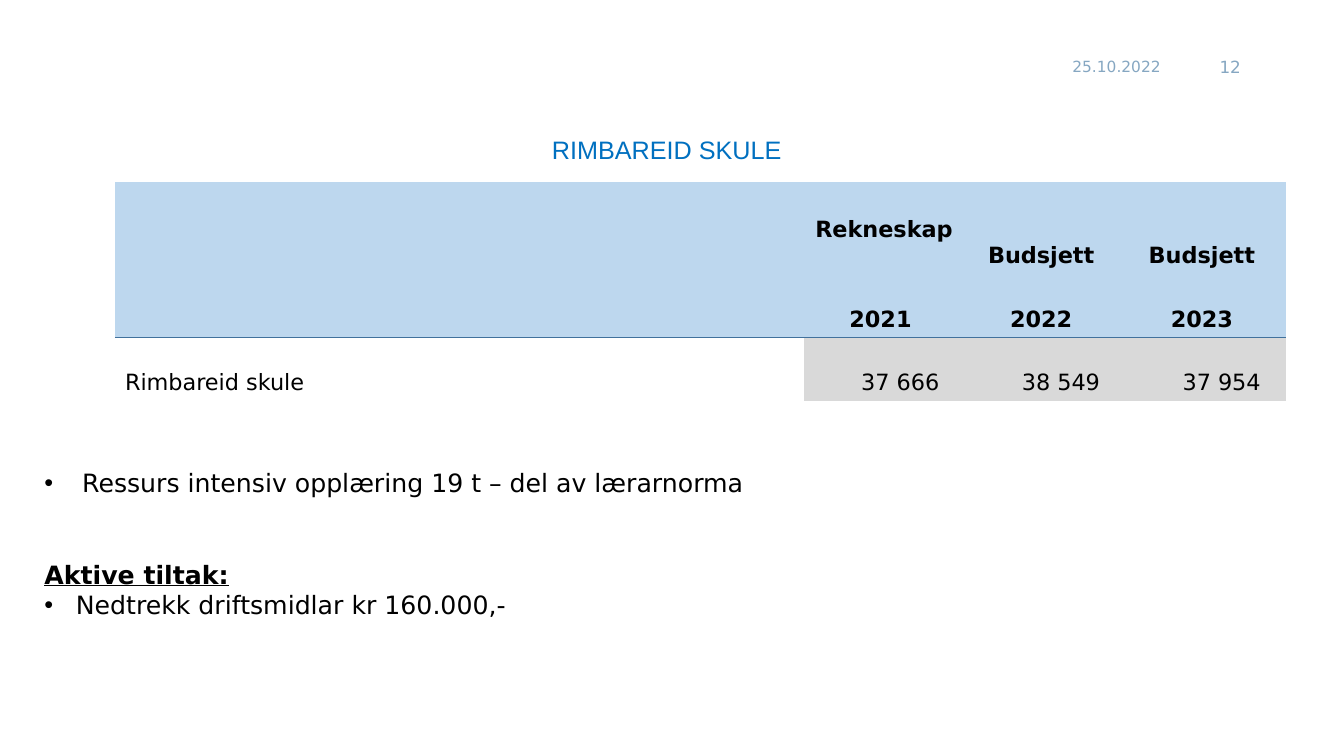
"""Build the budget slide for Rimbareid skule."""
from lxml import etree
from pptx import Presentation
from pptx.dml.color import RGBColor
from pptx.enum.text import MSO_ANCHOR, MSO_AUTO_SIZE, PP_ALIGN
from pptx.oxml import parse_xml
from pptx.oxml.ns import nsdecls, qn
from pptx.util import Pt

LEFT, MID, RIGHT = PP_ALIGN.LEFT, PP_ALIGN.CENTER, PP_ALIGN.RIGHT
TOP, CENTER, BOTTOM = MSO_ANCHOR.TOP, MSO_ANCHOR.MIDDLE, MSO_ANCHOR.BOTTOM
FIXED = MSO_AUTO_SIZE.NONE
BLACK = RGBColor(0x00, 0x00, 0x00)
BLUE = RGBColor(0x00, 0x70, 0xC0)
MUTED = RGBColor(0x86, 0xA7, 0xC2)
PALE = RGBColor(0xBD, 0xD7, 0xEE)
GRAY = RGBColor(0xD9, 0xD9, 0xD9)
RULE = RGBColor(0x41, 0x71, 0x9C)
NO_GRID = "{2D5ABB26-0587-4C30-8999-92F81FD0307C}"


def write(para, text, size=18, font="DejaVu Sans", color=BLACK, bold=False,
          line=False, align=LEFT, before=0):
    para.alignment = align
    para.space_before = Pt(before)
    run = para.add_run()
    run.text = text
    run.font.size = Pt(size)
    run.font.name = font
    run.font.color.rgb = color
    run.font.bold = bold
    run.font.underline = line


def place(shape, left, top, width, height, anchor):
    shape.left, shape.top = Pt(left), Pt(top)
    shape.width, shape.height = Pt(width), Pt(height)
    frame = shape.text_frame
    frame.word_wrap = True
    frame.auto_size = FIXED
    frame.vertical_anchor = anchor
    return frame


deck = Presentation()
deck.slide_width, deck.slide_height = Pt(960), Pt(540)
slide = deck.slides.add_slide(deck.slide_layouts[1])
shapes = slide.shapes

for text, left, width, size, align in [
    ("25.10.2022", 758.9, 82.8, 11, LEFT),
    ("12", 852.5, 41, 12, RIGHT),
]:
    box = shapes.add_textbox(0, 0, 0, 0)
    frame = place(box, left, 33.1, width, 28.8, CENTER)
    write(frame.paragraphs[0], text, size=size, color=MUTED, align=align)

frame = place(shapes.title, 24.5, 92.2, 903.6, 30, TOP)
write(frame.paragraphs[0], "RIMBAREID SKULE", font="Arial", color=BLUE,
      align=MID)

frame = place(slide.placeholders[1], 24.5, 330.4, 903.6, 140, TOP)
items = [
    ("Ressurs intensiv opplæring 19 t – del av lærarnorma", 27, {}),
    ("Aktive tiltak:", 0, {"bold": True, "line": True, "before": 44}),
    ("Nedtrekk driftsmidlar kr 160.000,-", 22.5, {}),
]
for i, (text, indent, style) in enumerate(items):
    para = frame.add_paragraph() if i else frame.paragraphs[0]
    props = para._p.get_or_add_pPr()
    props.set("marL", str(Pt(indent)))
    props.set("indent", str(-Pt(indent)))
    if indent:
        etree.SubElement(props, qn("a:buChar")).set("char", "•")
    else:
        etree.SubElement(props, qn("a:buNone"))
    write(para, text, **style)

rows = [
    ["", "Rekneskap", "Budsjett", "Budsjett"],
    ["", "2021", "2022", "2023"],
    ["Rimbareid skule", "37 666", "38 549", "37 954"],
]
widths = [492, 114.8, 114.8, 114.8]
heights = [65.3, 45.4, 45.4]
table = shapes.add_table(3, 4, Pt(82.1), Pt(130.3), Pt(sum(widths)),
                         Pt(sum(heights))).table
table.first_row = table.horz_banding = False
table._tbl.tblPr[0].text = NO_GRID
for col, width in zip(table.columns, widths):
    col.width = Pt(width)
for row, height in zip(table.rows, heights):
    row.height = Pt(height)

for r, row in enumerate(rows):
    for c, text in enumerate(row):
        cell = table.cell(r, c)
        cell.vertical_anchor = BOTTOM
        head = r < 2
        if head or c:
            cell.fill.solid()
            cell.fill.fore_color.rgb = PALE if head else GRAY
        else:
            cell.fill.background()
        if r:
            edge = "lnB" if r == 1 else "lnT"
            cell._tc.get_or_add_tcPr().insert(0, parse_xml(
                f'<a:{edge} {nsdecls("a")} w="{Pt(0.75)}"><a:solidFill>'
                f'<a:srgbClr val="{RULE}"/></a:solidFill></a:{edge}>'))
        if text:
            cell.margin_right = Pt(12.2 if head else 17.9)
            align = MID if head else RIGHT if c else LEFT
            write(cell.text_frame.paragraphs[0], text, size=16, bold=head,
                  align=align)

first = table.cell(0, 1)
first.margin_left = first.margin_right = Pt(5)
first.margin_bottom = Pt(22)

deck.save("out.pptx")
